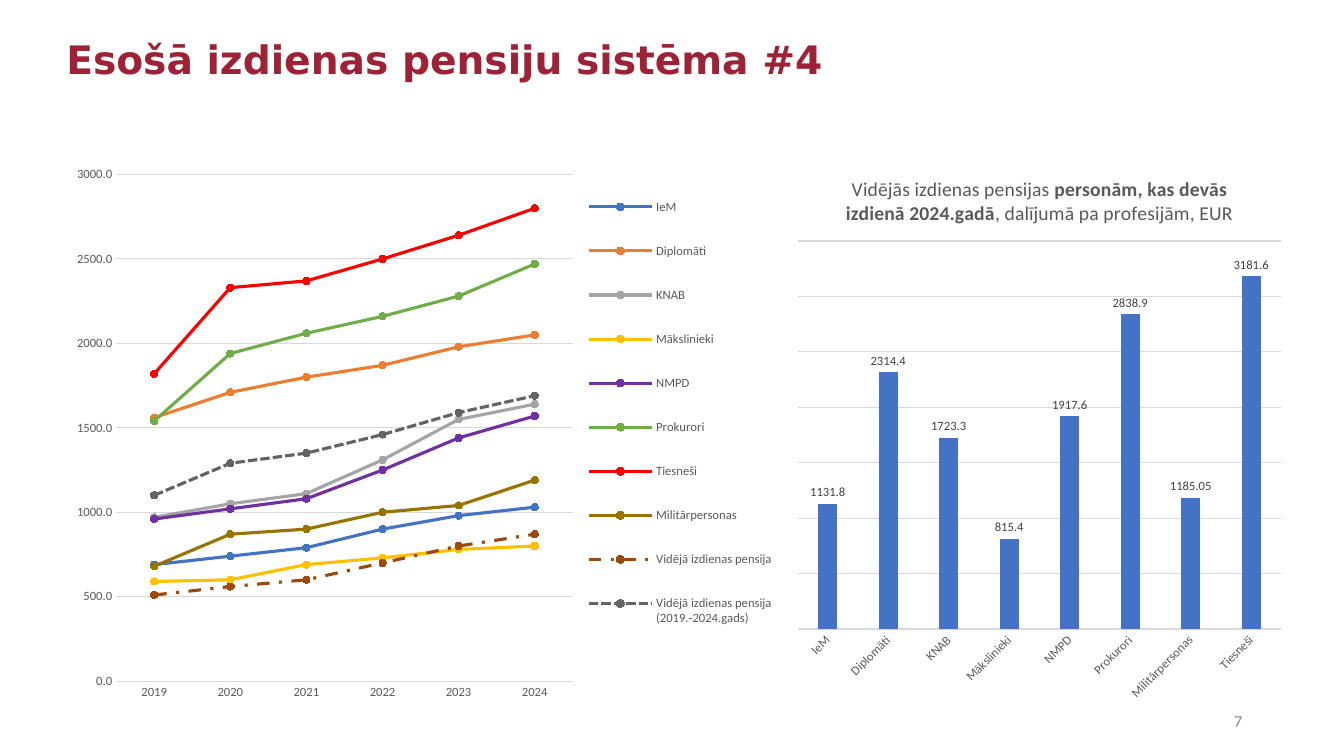
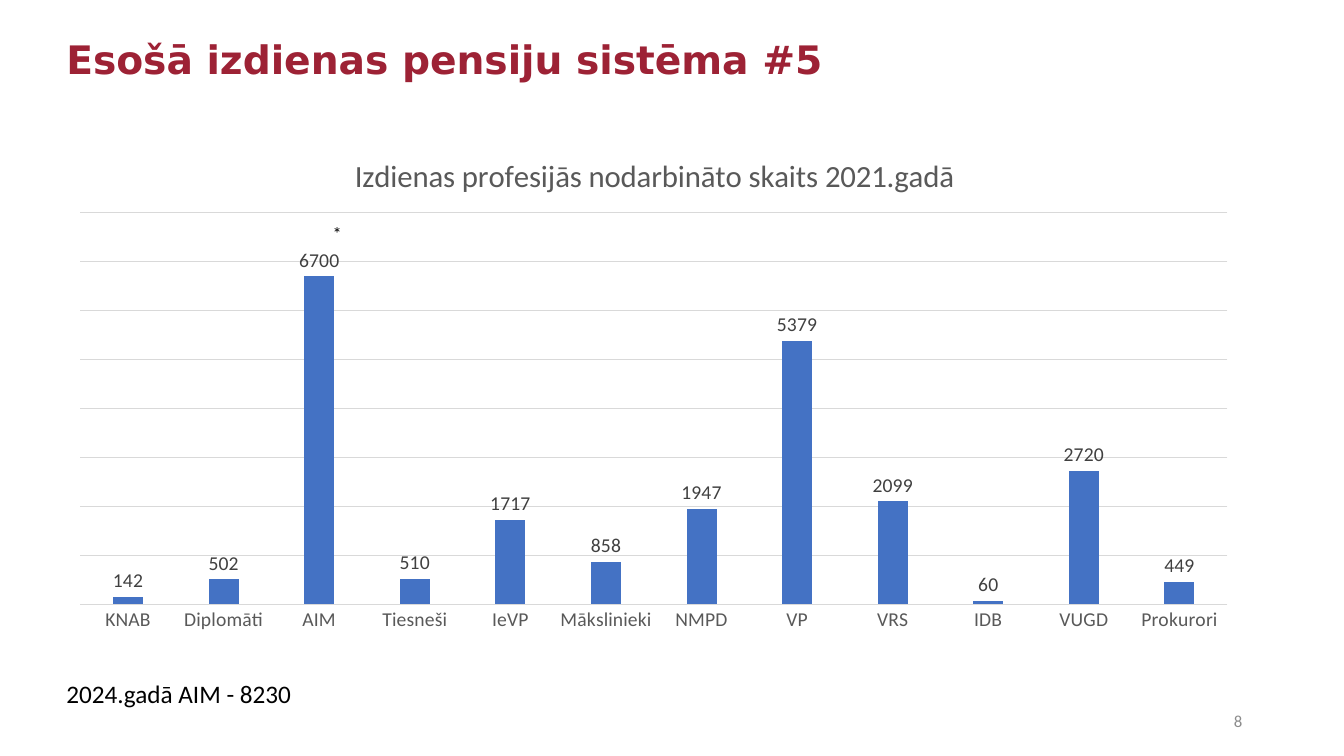
from pptx import Presentation
from pptx.chart.data import CategoryChartData
from pptx.dml.color import RGBColor
from pptx.enum.chart import (XL_CHART_TYPE, XL_LABEL_POSITION, XL_LEGEND_POSITION,
                             XL_MARKER_STYLE, XL_TICK_MARK)
from pptx.enum.dml import MSO_LINE
from pptx.enum.text import MSO_ANCHOR, MSO_AUTO_SIZE, PP_ALIGN
from pptx.oxml import parse_xml
from pptx.oxml.ns import nsdecls, qn
from pptx.util import Emu, Pt

LINE_CHART, COLUMN_CHART = XL_CHART_TYPE.LINE_MARKERS, XL_CHART_TYPE.COLUMN_CLUSTERED
OUTSIDE_END, LEGEND_RIGHT = XL_LABEL_POSITION.OUTSIDE_END, XL_LEGEND_POSITION.RIGHT
CIRCLE, NO_TICK = XL_MARKER_STYLE.CIRCLE, XL_TICK_MARK.NONE
DASH_DOT, SHORT_DASH = MSO_LINE.DASH_DOT, MSO_LINE.SQUARE_DOT
MIDDLE, TOP = MSO_ANCHOR.MIDDLE, MSO_ANCHOR.TOP
LEFT, RIGHT = PP_ALIGN.LEFT, PP_ALIGN.RIGHT
GROW = MSO_AUTO_SIZE.SHAPE_TO_FIT_TEXT

PX = 9144  # 100 px to the inch
SLIDE_SIZE = (1333, 750)
AUTO_ROTATION = -1000  # degrees; the chart format's value for automatic, unbroken labels
BODY_FONT, TITLE_FONT = "Calibri", "DejaVu Sans"
COLORS = {
    "title": "9D2235", "number": "8C8C8C", "text": "000000", "axis": "595959",
    "label": "404040", "grid": "D9D9D9", "blue": "4472C4", "orange": "ED7D31",
    "gray": "A5A5A5", "yellow": "FFC000", "purple": "7030A0", "green": "70AD47",
    "red": "FF0000", "olive": "997300", "brown": "9E480E", "dark": "636363",
}

# Average pensions by year: name, values, colour, dash
YEARS = ["2019", "2020", "2021", "2022", "2023", "2024"]
PENSION_SERIES = [
    ("IeM", (690, 740, 790, 900, 980, 1030), "blue", None),
    ("Diplomāti", (1560, 1710, 1800, 1870, 1980, 2050), "orange", None),
    ("KNAB", (970, 1050, 1110, 1310, 1550, 1640), "gray", None),
    ("Mākslinieki", (590, 600, 690, 730, 780, 800), "yellow", None),
    ("NMPD", (960, 1020, 1080, 1250, 1440, 1570), "purple", None),
    ("Prokurori", (1540, 1940, 2060, 2160, 2280, 2470), "green", None),
    ("Tiesneši", (1820, 2330, 2370, 2500, 2640, 2800), "red", None),
    ("Militārpersonas", (680, 870, 900, 1000, 1040, 1190), "olive", None),
    ("Vidējā izdienas pensija", (510, 560, 600, 700, 800, 870), "brown", DASH_DOT),
    ("Vidējā izdienas pensija (2019.-2024.gads)",
     (1100, 1290, 1350, 1460, 1590, 1690), "dark", SHORT_DASH),
]
NEW_PENSIONS = {
    "IeM": 1131.8, "Diplomāti": 2314.4, "KNAB": 1723.3, "Mākslinieki": 815.4,
    "NMPD": 1917.6, "Prokurori": 2838.9, "Militārpersonas": 1185.05, "Tiesneši": 3181.6,
}
EMPLOYED = {
    "KNAB": 142, "Diplomāti": 502, "AIM": 6700, "Tiesneši": 510, "IeVP": 1717,
    "Mākslinieki": 858, "NMPD": 1947, "VP": 5379, "VRS": 2099, "IDB": 60,
    "VUGD": 2720, "Prokurori": 449,
}


def color(name):
    return RGBColor.from_string(COLORS[name])


def to_emu(box):
    return [Emu(length * PX) for length in box]


def style_font(font, size, color_name, name=BODY_FONT, bold=False):
    font.size, font.name, font.bold = Pt(size), name, bold
    font.color.rgb = color(color_name)


def add_text(slide, box, text, size, color_name, font_name=BODY_FONT, bold=False,
             align=LEFT, anchor=TOP, auto_size=None):
    frame = slide.shapes.add_textbox(*to_emu(box)).text_frame
    frame.word_wrap = True
    frame.vertical_anchor = anchor
    if auto_size is not None:
        frame.auto_size = auto_size
    paragraph = frame.paragraphs[0]
    paragraph.text = text
    paragraph.alignment = align
    style_font(paragraph.font, size, color_name, font_name, bold)
    return paragraph


def add_base_slide(presentation, title, number):
    """Blank slide with the shared title and page number."""
    slide = presentation.slides.add_slide(presentation.slide_layouts[6])
    add_text(slide, (942, 695, 300, 40), str(number), 12, "number",
             align=RIGHT, anchor=MIDDLE)
    heading = add_text(slide, (56, 15, 1150, 92), title, 28, "title", TITLE_FONT,
                       bold=True, anchor=MIDDLE)
    heading.line_spacing = 0.9
    return slide


def set_layout(element, inner=False, **fractions):
    """Place a chart part by fractions (x, y, w, h) of the chart box."""
    for old in element.findall(qn("c:layout")):
        element.remove(old)
    target = '<c:layoutTarget val="inner"/>' if inner else ""
    modes = "".join(f'<c:{key}Mode val="edge"/>' for key in "xy")
    values = "".join(f'<c:{key} val="{value}"/>' for key, value in fractions.items())
    layout = parse_xml(f'<c:layout {nsdecls("c")}><c:manualLayout>{target}{modes}{values}'
                       '</c:manualLayout></c:layout>')
    before = [child for child in element if child.tag in (qn("c:tx"), qn("c:legendPos"))]
    element.insert(len(before), layout)


def add_chart(slide, kind, box, categories, series, top, step, size, plot_area):
    """Chart with the shared axes and gridlines."""
    data = CategoryChartData()
    data.categories = categories
    for name, values in series:
        data.add_series(name, values)
    chart = slide.shapes.add_chart(kind, *to_emu(box), data).chart
    chart.has_title = chart.has_legend = False
    style_font(chart.font, size, "text")
    chart.plots[0].vary_by_categories = False
    for axis in (chart.category_axis, chart.value_axis):
        axis.major_tick_mark = axis.minor_tick_mark = NO_TICK
        style_font(axis.tick_labels.font, size, "axis")
    value_axis = chart.value_axis
    value_axis.minimum_scale, value_axis.maximum_scale = 0, top
    value_axis.major_unit = step
    value_axis.has_major_gridlines = True
    value_axis.format.line.fill.background()
    for line in (chart.category_axis.format.line, value_axis.major_gridlines.format.line):
        line.color.rgb = color("grid")
        line.width = Pt(0.75)
    area = chart._chartSpace.find(qn("c:chart")).find(qn("c:plotArea"))
    set_layout(area, inner=True, **plot_area)
    return chart


def add_line_chart(slide, box):
    chart = add_chart(slide, LINE_CHART, box, YEARS, [row[:2] for row in PENSION_SERIES],
                      3000, 500, 9, dict(x=0.074, y=0.033, w=0.63, h=0.914))
    labels = chart.value_axis.tick_labels
    labels.number_format, labels.number_format_is_linked = "0.0", False
    for series, (_, _, color_name, dash) in zip(chart.plots[0].series, PENSION_SERIES):
        series.smooth = False
        line = series.format.line
        line.color.rgb = color(color_name)
        line.width = Pt(2.25)
        if dash:
            line.dash_style = dash
        marker = series.marker
        marker.style, marker.size = CIRCLE, 5
        marker.format.fill.solid()
        marker.format.fill.fore_color.rgb = color(color_name)
        marker.format.line.color.rgb = color(color_name)
    chart.has_legend = True
    legend = chart.legend
    legend.position, legend.include_in_layout = LEGEND_RIGHT, False
    style_font(legend.font, 9, "axis")
    set_layout(legend._element, x=0.717, y=0.025, w=0.27, h=0.875)


def add_column_chart(slide, box, values, title_runs, title_size, title_place,
                     top, step, size, plot_area, rotation=AUTO_ROTATION):
    """Column chart; title_runs holds pairs of text and bold."""
    chart = add_chart(slide, COLUMN_CHART, box, list(values),
                      [("Series 1", list(values.values()))], top, step, size, plot_area)
    chart.value_axis.visible = False
    label_body = chart.category_axis._element.find(qn("c:txPr")).find(qn("a:bodyPr"))
    label_body.set("rot", str(rotation * 60000))
    plot = chart.plots[0]
    plot.gap_width, plot.overlap = 219, -27
    fill = plot.series[0].format.fill
    fill.solid()
    fill.fore_color.rgb = color("blue")
    plot.has_data_labels = True
    labels = plot.data_labels
    labels.show_value, labels.position = True, OUTSIDE_END
    style_font(labels.font, size, "label")
    chart.has_title = True
    paragraph = chart.chart_title.text_frame.paragraphs[0]
    for text, bold in title_runs:
        run = paragraph.add_run()
        run.text = text
        style_font(run.font, title_size, "axis", bold=bold)
    set_layout(chart.chart_title._element, **title_place)


def add_pension_slide(presentation):
    slide = add_base_slide(presentation, "Esošā izdienas pensiju sistēma #4", 7)
    add_line_chart(slide, (62, 155, 719, 550))
    title_runs = [("Vidējās izdienas pensijas ", False),
                  ("personām, kas devās izdienā 2024.gadā", True),
                  (", dalījumā pa profesijām, EUR", False)]
    add_column_chart(slide, (781, 155, 500, 550), NEW_PENSIONS, title_runs, 14,
                     dict(x=0.11, y=0.03), 3500, 500, 9,
                     dict(x=0.02, y=0.153, w=0.96, h=0.7), rotation=-45)


def add_employment_slide(presentation):
    slide = add_base_slide(presentation, "Esošā izdienas pensiju sistēma #5", 8)
    title_runs = [("Izdienas profesijās nodarbināto skaits 2021.gadā", False)]
    add_column_chart(slide, (56, 130, 1185, 508), EMPLOYED, title_runs, 22,
                     dict(x=0.245, y=0.034), 8000, 1000, 14,
                     dict(x=0.02, y=0.16, w=0.96, h=0.764))
    # Footnote mark and footnote
    add_text(slide, (320, 216, 30, 32), "*", 13, "text", auto_size=GROW)
    add_text(slide, (56, 668, 437, 40), "2024.gadā AIM - 8230", 18, "text", auto_size=GROW)


def main():
    presentation = Presentation()
    presentation.slide_width, presentation.slide_height = to_emu(SLIDE_SIZE)
    add_pension_slide(presentation)
    add_employment_slide(presentation)
    presentation.save("out.pptx")


if __name__ == "__main__":
    main()
